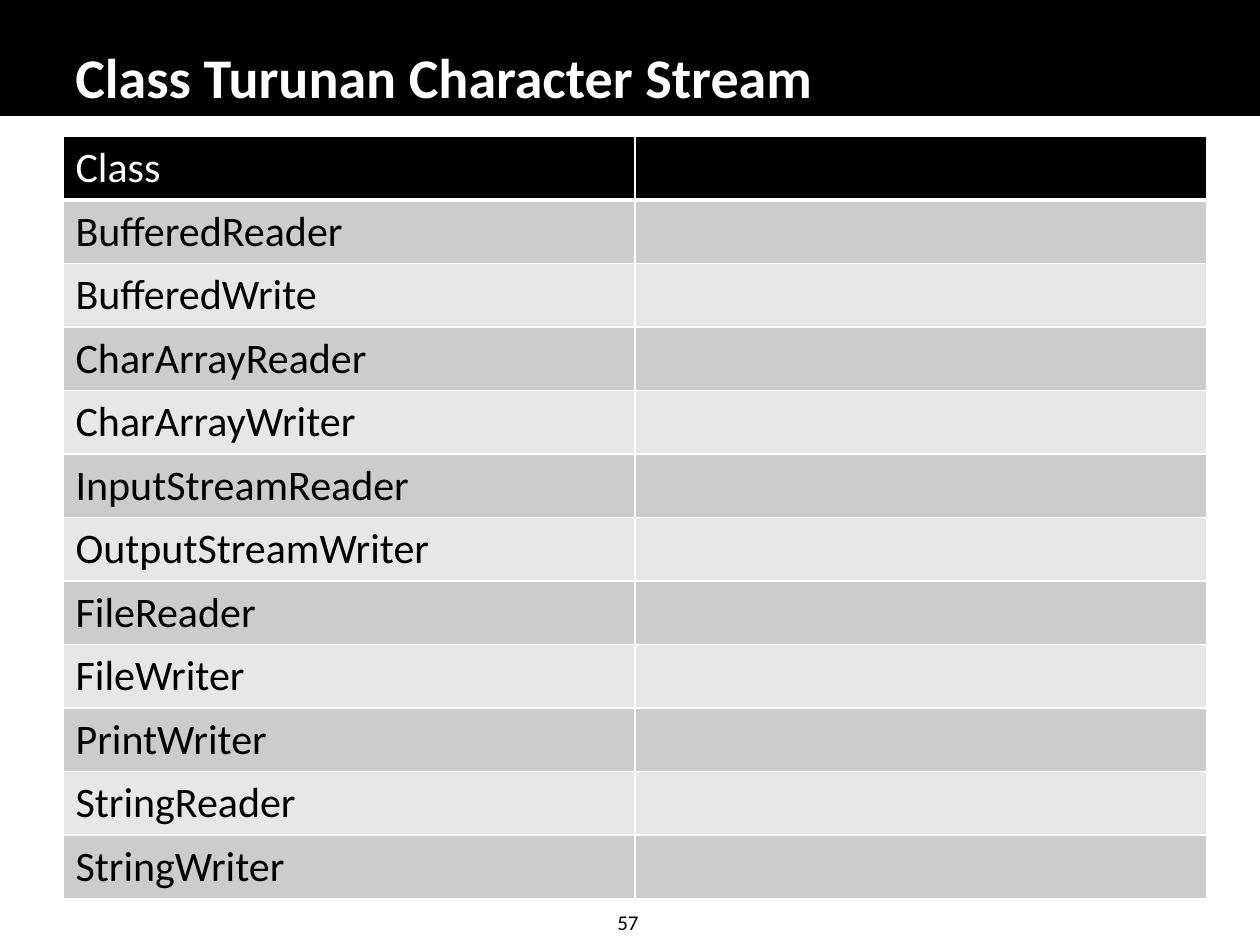
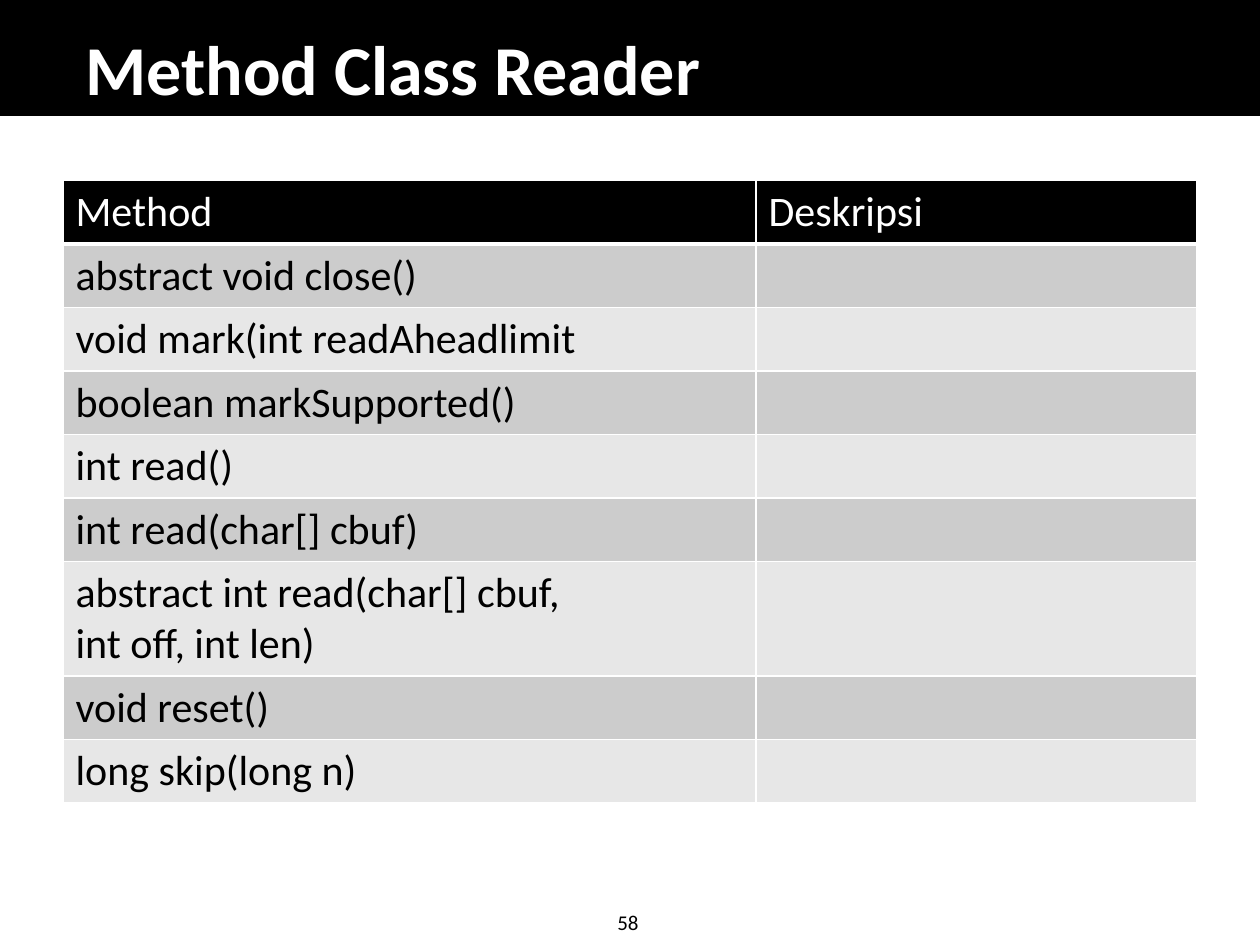
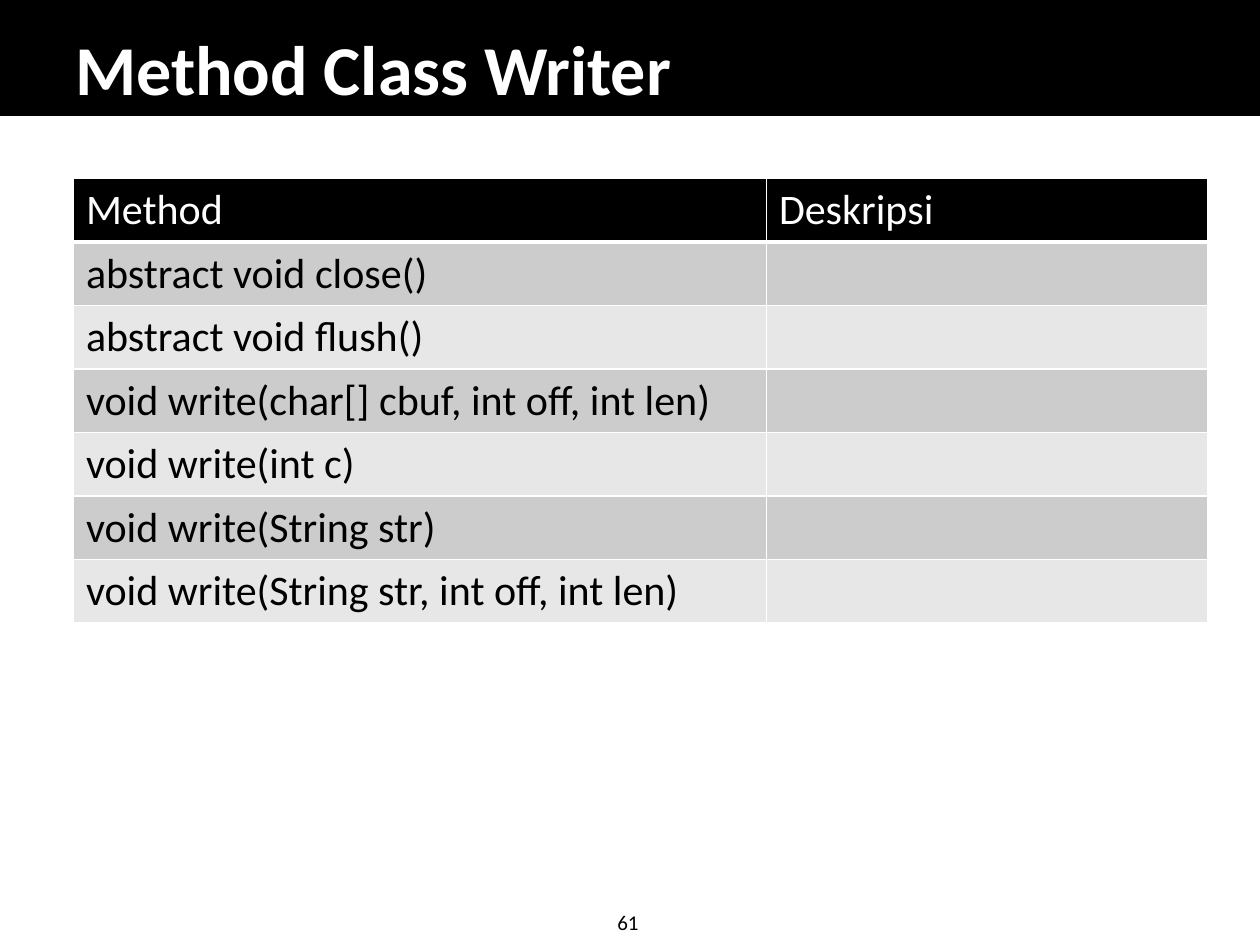
from dataclasses import dataclass

from lxml import etree
from pptx import Presentation
from pptx.dml.color import RGBColor
from pptx.enum.shapes import MSO_SHAPE
from pptx.enum.text import MSO_ANCHOR, PP_ALIGN
from pptx.oxml.ns import qn
from pptx.util import Cm, Pt

RECTANGLE = MSO_SHAPE.RECTANGLE
TOP, BOTTOM = MSO_ANCHOR.TOP, MSO_ANCHOR.BOTTOM
LEFT, CENTER = PP_ALIGN.LEFT, PP_ALIGN.CENTER

BLACK = RGBColor(0x00, 0x00, 0x00)
WHITE = RGBColor(0xFF, 0xFF, 0xFF)
DARK_ROW = RGBColor(0xCC, 0xCC, 0xCC)
LIGHT_ROW = RGBColor(0xE7, 0xE7, 0xE7)

FONT = "Calibri"
SLIDE_W, SLIDE_H = Cm(25.4), Cm(19.05)
BAND_H = Cm(2.33)
TITLE_W, TITLE_H = Cm(23.7), Cm(1.9)
ROW_H, EXTRA_LINE_H = Cm(1.28), Cm(1.03)
THIN, THICK = Pt(1), Pt(3)


@dataclass(frozen=True)
class TableSlide:
    title: str
    title_size: int
    title_left: float
    number: int
    left: float
    top: float
    col_widths: tuple[float, float]
    header: tuple[str, str]
    names: tuple[str, ...]


METHOD_COLS = (13.97, 8.89)
METHOD_HEADER = ("Method", "Deskripsi")

SLIDES = (
    TableSlide(
        "Class Turunan Character Stream", 32, 1.27, 57, 1.27, 2.75,
        (11.53, 11.53), ("Class", ""),
        ("BufferedReader", "BufferedWrite", "CharArrayReader",
         "CharArrayWriter", "InputStreamReader", "OutputStreamWriter",
         "FileReader", "FileWriter", "PrintWriter", "StringReader",
         "StringWriter"),
    ),
    TableSlide(
        "Method Class Reader", 40, 1.48, 58, 1.27, 3.64,
        METHOD_COLS, METHOD_HEADER,
        ("abstract void close()", "void mark(int readAheadlimit",
         "boolean markSupported()", "int read()", "int read(char[] cbuf)",
         "abstract int read(char[] cbuf,\nint off, int len)",
         "void reset()", "long skip(long n)"),
    ),
    TableSlide(
        "Method Class Writer", 40, 1.27, 61, 1.48, 3.6,
        METHOD_COLS, METHOD_HEADER,
        ("abstract void close()", "abstract void flush()",
         "void write(char[] cbuf, int off, int len)", "void write(int c)",
         "void write(String str)", "void write(String str, int off, int len)"),
    ),
)


def write(tf, text: str, *, size: int, color: RGBColor = BLACK,
          bold: bool = False, align=LEFT, anchor=None, wrap: bool = True) -> None:
    """Fill a text frame, one paragraph per line of text."""
    tf.word_wrap = wrap
    if anchor is not None:
        tf.vertical_anchor = anchor
    for i, line in enumerate(text.split("\n")):
        p = tf.paragraphs[0] if i == 0 else tf.add_paragraph()
        p.alignment = align
        r = p.add_run()
        r.text = line
        r.font.name, r.font.size = FONT, Pt(size)
        r.font.bold, r.font.color.rgb = bold, color


def set_borders(cell, top: int, bottom: int) -> None:
    """Draw white lines on the four sides of a cell; call before its fill."""
    tc_pr = cell._tc.get_or_add_tcPr()
    widths = {"a:lnL": THIN, "a:lnR": THIN, "a:lnT": top, "a:lnB": bottom}
    for tag, width in widths.items():
        ln = etree.SubElement(tc_pr, qn(tag), w=str(int(width)))
        fill = etree.SubElement(ln, qn("a:solidFill"))
        etree.SubElement(fill, qn("a:srgbClr"), val=str(WHITE))


def add_frame(s, spec: TableSlide) -> None:
    """Title band, title and page number."""
    band = s.shapes.add_shape(RECTANGLE, 0, 0, SLIDE_W, BAND_H)
    band.shadow.inherit = False
    band.fill.solid()
    band.fill.fore_color.rgb = BLACK
    band.line.color.rgb = BLACK
    band.line.width = THIN

    number = s.shapes.add_textbox(Cm(12.14), Cm(18.21), Cm(1.04), Cm(0.76))
    write(number.text_frame, str(spec.number), size=12, align=CENTER,
          anchor=TOP, wrap=False)

    title = s.shapes.add_textbox(Cm(spec.title_left), BAND_H - TITLE_H,
                                 TITLE_W, TITLE_H)
    write(title.text_frame, spec.title, size=spec.title_size, color=WHITE,
          bold=True, anchor=BOTTOM)


def add_name_table(s, spec: TableSlide) -> None:
    """Header row, then names in rows of alternating grey."""
    rows = [spec.header] + [(name, "") for name in spec.names]
    heights = [ROW_H + EXTRA_LINE_H * row[0].count("\n") for row in rows]
    widths = [Cm(w) for w in spec.col_widths]
    table = s.shapes.add_table(len(rows), len(widths), Cm(spec.left),
                               Cm(spec.top), sum(widths), sum(heights)).table
    for col, width in zip(table.columns, widths):
        col.width = width
    for i, row in enumerate(rows):
        table.rows[i].height = heights[i]
        fill = BLACK if i == 0 else DARK_ROW if i % 2 else LIGHT_ROW
        for j, text in enumerate(row):
            cell = table.cell(i, j)
            set_borders(cell, top=THICK if i == 1 else THIN,
                        bottom=THICK if i == 0 else THIN)
            cell.fill.solid()
            cell.fill.fore_color.rgb = fill
            if text:
                write(cell.text_frame, text, size=24,
                      color=WHITE if i == 0 else BLACK)


def main() -> None:
    prs = Presentation()
    prs.slide_width, prs.slide_height = SLIDE_W, SLIDE_H
    for spec in SLIDES:
        s = prs.slides.add_slide(prs.slide_layouts[6])
        add_frame(s, spec)
        add_name_table(s, spec)
    prs.save("out.pptx")


if __name__ == "__main__":
    main()
